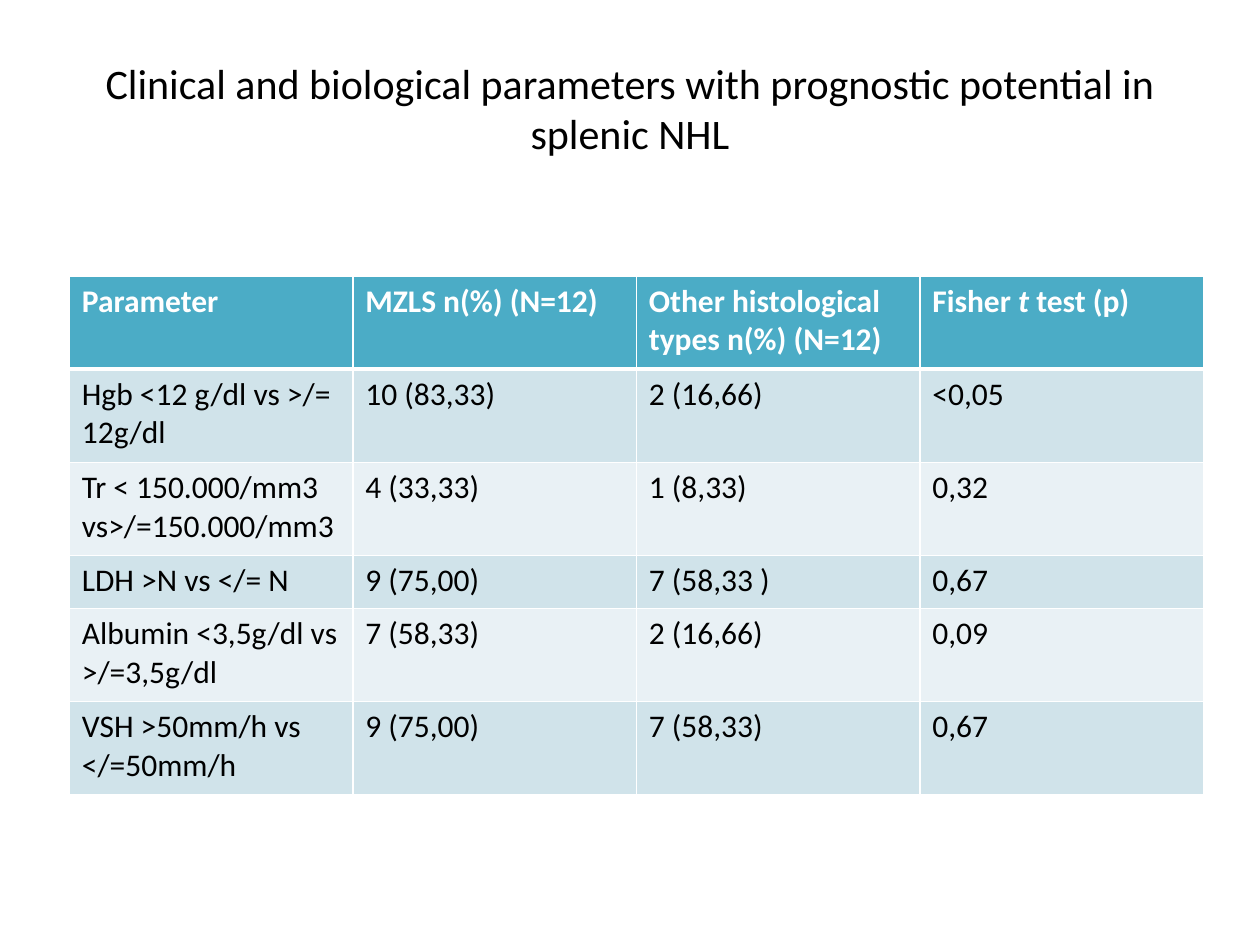
from lxml.etree import SubElement
from pptx import Presentation
from pptx.dml.color import RGBColor
from pptx.enum.text import MSO_ANCHOR, PP_ALIGN
from pptx.oxml.ns import qn
from pptx.util import Inches, Pt

TITLE = "Clinical and biological parameters with prognostic potential in splenic NHL"
HEADER = [
    ["Parameter"],
    ["MZLS n(%) (N=12)"],
    ["Other histological types n(%) (N=12)"],
    ["Fisher", " t ", "test (p)"],
]
ROWS = [
    ("Hgb <12 g/dl vs >/= 12g/dl", "10 (83,33)", "2 (16,66)", "<0,05"),
    ("Tr < 150.000/mm3 vs>/=150.000/mm3", "4 (33,33)", "1 (8,33)", "0,32"),
    ("LDH >N vs </= N", "9 (75,00)", "7 (58,33 )", "0,67"),
    ("Albumin <3,5g/dl vs >/=3,5g/dl", "7 (58,33)", "2 (16,66)", "0,09"),
    ("VSH >50mm/h vs </=50mm/h", "9 (75,00)", "7 (58,33)", "0,67"),
]
ROW_HEIGHTS = [0.74, 0.74, 0.74, 0.42, 0.74, 0.74]
COLUMN_WIDTH = 2.25
WHITE, BLACK, TEAL = "FFFFFF", "000000", "4BACC6"
BANDS = ["D0E3EA", "E9F1F5"]
TITLE_FORMAT = {"name": "Calibri", "size": Pt(24)}
HEADER_FORMAT = {"name": "Calibri", "size": Pt(18), "bold": True}
BODY_FORMAT = {"name": "Calibri", "size": Pt(18), "bold": False}


def paint(color_format, color):
    color_format.rgb = RGBColor.from_string(color)


def add_spans(para, texts, font_format, color):
    for text in texts:
        span = para.add_run()
        span.text = text
        for name, value in font_format.items():
            setattr(span.font, name, value)
        if text == " t ":
            span.font.italic = True
        paint(span.font.color, color)


def add_borders(cell, top, bottom):
    properties = cell._tc.get_or_add_tcPr()
    for side, width in {"L": 1, "R": 1, "T": top, "B": bottom}.items():
        line = SubElement(properties, qn(f"a:ln{side}"), w=str(Pt(width)))
        fill = SubElement(line, qn("a:solidFill"))
        SubElement(fill, qn("a:srgbClr"), val=WHITE)


def fill_cell(cell, texts, row):
    is_header = row == 0
    add_borders(cell, 3 if row == 1 else 1, 3 if is_header else 1)
    cell.fill.solid()
    paint(cell.fill.fore_color, TEAL if is_header else BANDS[(row - 1) % 2])
    add_spans(
        cell.text_frame.paragraphs[0],
        texts,
        HEADER_FORMAT if is_header else BODY_FORMAT,
        WHITE if is_header else BLACK,
    )


def add_title(page):
    title = page.shapes.title
    title.left, title.top = Inches(0.5), Inches(0.23)
    title.width, title.height = Inches(9), Inches(1.25)
    title.text_frame.vertical_anchor = MSO_ANCHOR.MIDDLE
    para = title.text_frame.paragraphs[0]
    para.alignment = PP_ALIGN.CENTER
    add_spans(para, [TITLE], TITLE_FORMAT, BLACK)


def add_parameter_table(page):
    content = [HEADER] + [[[text] for text in row] for row in ROWS]
    table = page.shapes.add_table(
        len(content), len(HEADER), Inches(0.55), Inches(2.19),
        Inches(COLUMN_WIDTH * len(HEADER)), Inches(sum(ROW_HEIGHTS)),
    ).table
    for column in table.columns:
        column.width = Inches(COLUMN_WIDTH)
    for row, (height, cells) in enumerate(zip(ROW_HEIGHTS, content)):
        table.rows[row].height = Inches(height)
        for column, texts in enumerate(cells):
            fill_cell(table.cell(row, column), texts, row)


def main():
    deck = Presentation()
    deck.slide_width, deck.slide_height = Inches(10), Inches(7.5)
    page = deck.slides.add_slide(deck.slide_layouts.get_by_name("Title Only"))
    add_title(page)
    add_parameter_table(page)
    deck.save("out.pptx")


if __name__ == "__main__":
    main()
